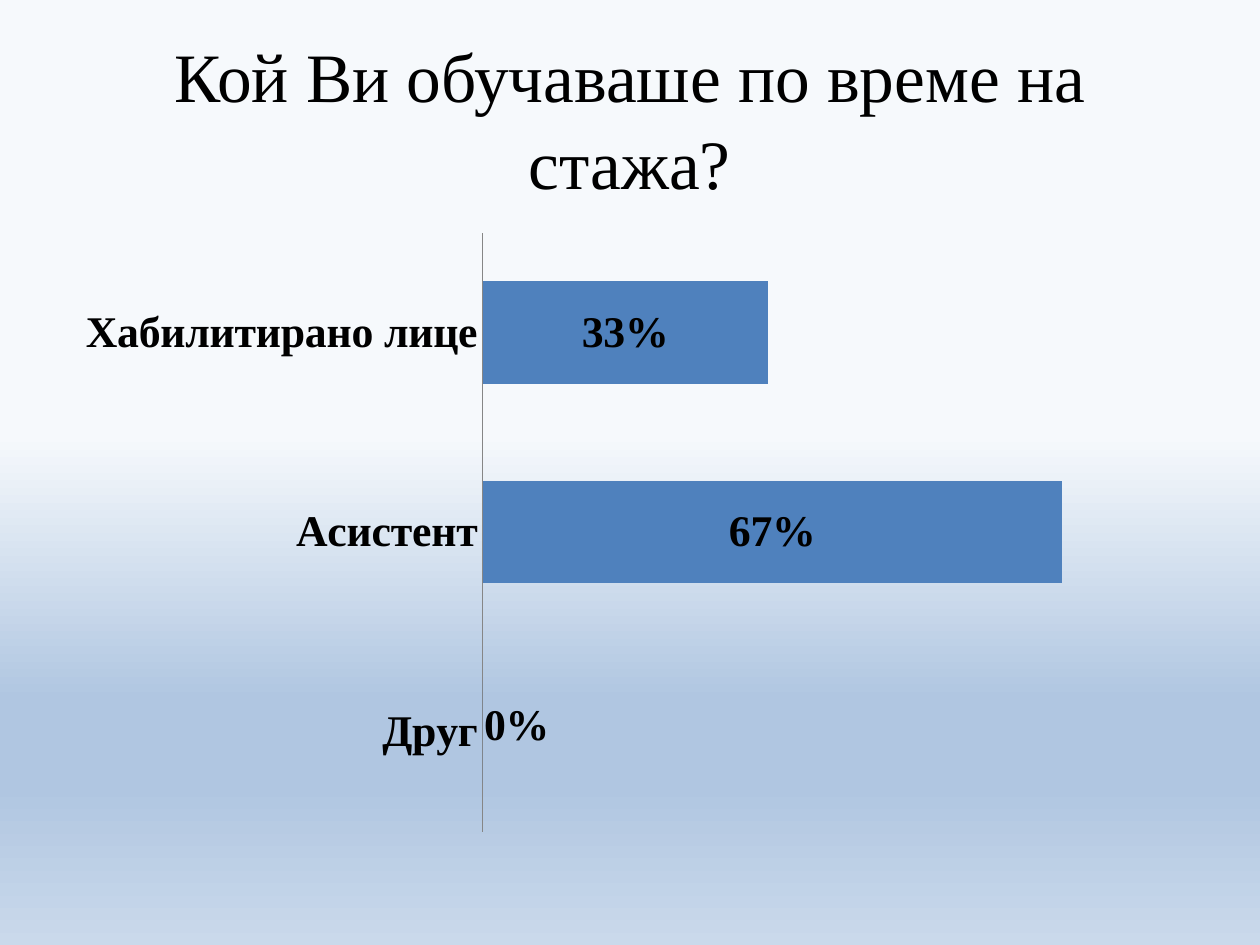
"""Build a slide with a bar chart of who trained the interns."""
from pptx import Presentation
from pptx.chart.data import CategoryChartData
from pptx.dml.color import RGBColor
from pptx.enum.chart import XL_CHART_TYPE as ChartType, XL_LABEL_POSITION as LabelPos
from pptx.enum.chart import XL_TICK_MARK as TickMark
from pptx.enum.text import MSO_ANCHOR as Anchor, PP_ALIGN as Align
from pptx.oxml import parse_xml
from pptx.oxml.ns import nsdecls
from pptx.util import Pt
from copy import deepcopy

BLACK = RGBColor(0x00, 0x00, 0x00)
BAR_BLUE = RGBColor(0x4F, 0x81, 0xBD)
AXIS_GRAY = RGBColor(0x86, 0x86, 0x86)
PALE = RGBColor(0xF6, 0xF9, 0xFC)
DEEP = RGBColor(0xB0, 0xC6, 0xE1)
SOFT = RGBColor(0xCA, 0xD9, 0xEB)
SERIF = "Times New Roman"


def style_font(font, size, bold):
    font.name = SERIF
    font.size = Pt(size)
    font.bold = bold
    font.color.rgb = BLACK


def manual_layout(**settings):
    items = "".join(f'<c:{key} val="{value}"/>' for key, value in settings.items())
    return parse_xml(f'<c:layout {nsdecls("c")}><c:manualLayout>{items}</c:manualLayout></c:layout>')


prs = Presentation()
prs.slide_width, prs.slide_height = Pt(720), Pt(540)
slide = prs.slides.add_slide(prs.slide_layouts[6])

backdrop = slide.background.fill
backdrop.gradient()
backdrop.gradient_angle = 270
stop_list = slide.element.xpath(".//a:gsLst")[0]
for extra in [deepcopy(stop) for stop in stop_list]:
    stop_list.append(extra)
shades = [(0.46, PALE), (0.74, DEEP), (0.83, DEEP), (1, SOFT)]
for stop, (position, color) in zip(backdrop.gradient_stops, shades):
    stop.position = position
    stop.color.rgb = color

title = slide.shapes.add_textbox(Pt(36), Pt(21.6), Pt(648), Pt(90)).text_frame
title.word_wrap = True
title.vertical_anchor = Anchor.MIDDLE
question = title.paragraphs[0]
question.alignment = Align.CENTER
question.line_spacing = 1.04
run = question.add_run()
run.text = "Кой Ви обучаваше по време на стажа?"
style_font(run.font, 39.6, False)

answers = CategoryChartData(number_format="0%")
answers.categories = ["Друг", "Асистент", "Хабилитирано лице"]
answers.add_series("Series 1", [0, 0.67, 0.33])
chart = slide.shapes.add_chart(
    ChartType.BAR_STACKED, Pt(36), Pt(126), Pt(648), Pt(356.4), answers
).chart
chart.has_legend = False
chart.has_title = False
chart.font.name = "Calibri"
chart.font.size = Pt(18)
chart.font.color.rgb = BLACK

trainers = chart.category_axis
trainers.major_tick_mark = TickMark.NONE
trainers.format.line.color.rgb = AXIS_GRAY
trainers.format.line.width = Pt(0.75)
style_font(trainers.tick_labels.font, 25, True)

shares = chart.value_axis
shares.visible = False
shares.has_major_gridlines = False
shares.minimum_scale, shares.maximum_scale = 0, 0.8

plot = chart.plots[0]
plot.gap_width, plot.overlap = 95, 100
plot.vary_by_categories = False
bars = plot.series[0]
bars.format.fill.solid()
bars.format.fill.fore_color.rgb = BAR_BLUE

labels = bars.data_labels
labels.show_value = True
labels.number_format = "0%"
labels.number_format_is_linked = False
labels.position = LabelPos.CENTER
style_font(labels.font, 25, True)

zero_label = bars.points[0].data_label
style_font(zero_label.font, 25, True)
zero_label.position = LabelPos.CENTER
zero_index = chart.element.xpath(".//c:dLbl/c:idx")[0]
zero_index.addnext(parse_xml(f'<c:numFmt {nsdecls("c")} formatCode="0%" sourceLinked="0"/>'))
zero_index.addnext(manual_layout(x=0.03, y=-0.01))

plot_area = chart.element.xpath(".//c:plotArea")[0]
for automatic in plot_area.xpath("./c:layout"):
    plot_area.remove(automatic)
plot_area.insert(0, manual_layout(
    layoutTarget="inner", xMode="edge", yMode="edge", x=0.37, y=0.02, w=0.61, h=0.96
))

prs.save("out.pptx")
